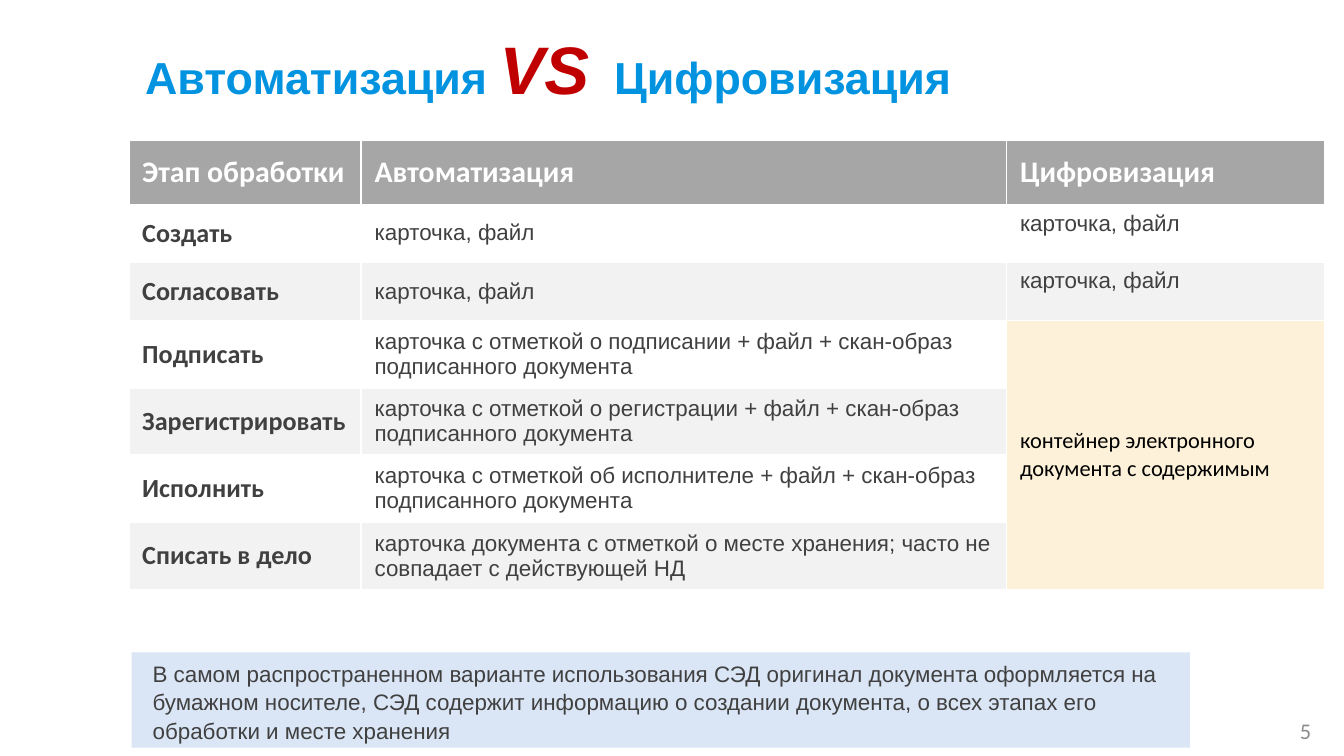
import pptx
import pptx.util
import pptx.dml.color
import pptx.enum.shapes
import pptx.enum.text

Pt = pptx.util.Pt
RGB = pptx.dml.color.RGBColor
ANCHOR = pptx.enum.text.MSO_ANCHOR
ALIGN = pptx.enum.text.PP_ALIGN

WHITE = RGB(0xFF, 0xFF, 0xFF)
BLACK = RGB(0x00, 0x00, 0x00)
DARK = RGB(0x40, 0x40, 0x40)
GREY = RGB(0xA6, 0xA6, 0xA6)
PALE = RGB(0xF2, 0xF2, 0xF2)
CREAM = RGB(0xFD, 0xF2, 0xD9)
SKY = RGB(0xDA, 0xE6, 0xF6)
BLUE = RGB(0x02, 0x93, 0xE0)
RED = RGB(0xC0, 0x00, 0x00)
MUTED = RGB(0x8C, 0x8C, 0x8C)
PX = 9525  # 96 px to the inch


def place(left, top, width, height):
    return [n * PX for n in (left, top, width, height)]


def style(font, name, size, color, bold=False):
    font.name, font.size, font.bold = name, Pt(size), bold
    font.color.rgb = color


deck = pptx.Presentation()
deck.slide_width, deck.slide_height = 960 * PX, 540 * PX
slide = deck.slides.add_slide(deck.slide_layouts[5])
shapes = slide.shapes

# Title
title = shapes.title
title.left, title.top, title.width, title.height = place(94, 14, 799, 68)
frame = title.text_frame
frame.auto_size = pptx.enum.text.MSO_AUTO_SIZE.NONE
frame.vertical_anchor = ANCHOR.BOTTOM
para = frame.paragraphs[0]
para.alignment = ALIGN.LEFT
for text, size, color in (("Автоматизация ", 24, BLUE), ("VS", 36, RED),
                          ("  Цифровизация", 24, BLUE)):
    run = para.add_run()
    run.text = text
    style(run.font, "Arial", size, color, True)
    run.font.italic = color == RED

# Table of stages
FILE = "карточка, файл"
SCAN = "файл + скан-образ подписанного документа"
rows = [
    ("Этап обработки", "Автоматизация", "Цифровизация"),
    ("Создать", FILE, FILE),
    ("Согласовать", FILE, FILE),
    ("Подписать", f"карточка с отметкой о подписании + {SCAN}",
     "контейнер электронного документа с содержимым"),
    ("Зарегистрировать", f"карточка с отметкой о регистрации + {SCAN}", ""),
    ("Исполнить", f"карточка с отметкой об исполнителе + {SCAN}", ""),
    ("Списать в дело", "карточка документа с отметкой о месте хранения; "
     "часто не совпадает с действующей НД", ""),
]
table = shapes.add_table(7, 3, *place(92, 100, 854, 321)).table
for col, width in zip(table.columns, (166, 461, 227)):
    col.width = width * PX
for row, height in zip(table.rows, (46, 41, 42, 48, 48, 48, 48)):
    row.height = height * PX
table.cell(3, 2).merge(table.cell(6, 2))

for r, texts in enumerate(rows):
    for c, text in enumerate(texts):
        cell = table.cell(r, c)
        if cell.is_spanned:
            continue
        fill, look = (PALE, WHITE)[r % 2], ("Arial", 12, DARK)
        if r == 0:
            fill, look = GREY, ("Calibri", 16, WHITE, True)
        elif c == 0:
            look = ("Calibri", 14, DARK, True)
        elif cell.is_merge_origin:
            fill, look = CREAM, ("Calibri", 12, BLACK)
        cell.fill.solid()
        cell.fill.fore_color.rgb = fill
        top = c == 2 and r in (1, 2)
        cell.vertical_anchor = ANCHOR.TOP if top else ANCHOR.MIDDLE
        cell.text = text
        style(cell.text_frame.paragraphs[0].font, *look)

# Note under the table
note = shapes.add_shape(pptx.enum.shapes.MSO_SHAPE.RECTANGLE,
                        *place(94, 466, 756, 68))
note.shadow.inherit = False
note.fill.solid()
note.fill.fore_color.rgb = SKY
note.line.fill.background()
frame = note.text_frame
frame.word_wrap = True
frame.vertical_anchor = ANCHOR.TOP
frame.margin_left = 15 * PX
para = frame.paragraphs[0]
para.text = ("В самом распространенном варианте использования СЭД оригинал "
             "документа оформляется на бумажном носителе, СЭД содержит "
             "информацию о создании документа, о всех этапах его обработки "
             "и месте хранения")
para.alignment = ALIGN.LEFT
para.line_spacing = 1.05
style(para.font, "Arial", 12, DARK)

# Page number
page = shapes.add_textbox(*place(722, 507, 224, 29)).text_frame
page.word_wrap = True
page.vertical_anchor = ANCHOR.MIDDLE
para = page.paragraphs[0]
para.text = "5"
para.alignment = ALIGN.RIGHT
style(para.font, "Calibri", 12, MUTED)

deck.save("out.pptx")
